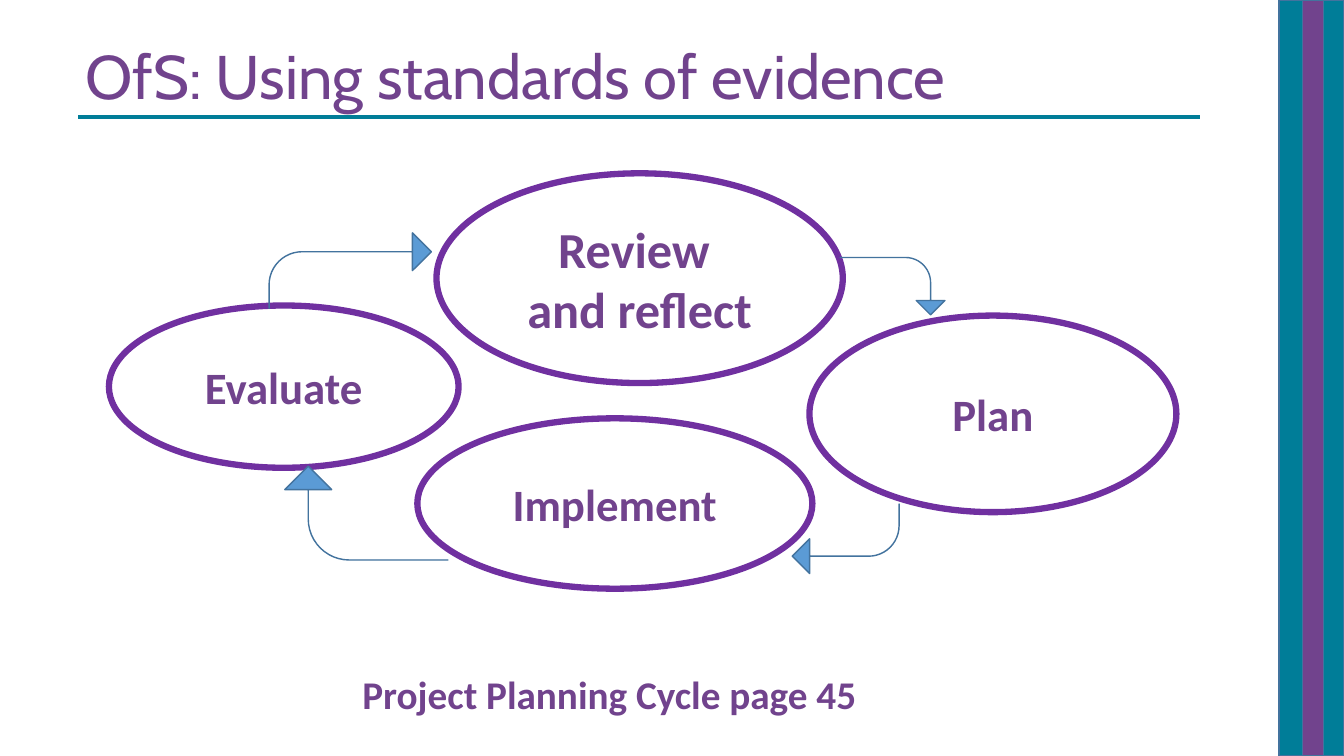
from dataclasses import dataclass

import pptx
import pptx.dml.color
import pptx.enum.shapes
import pptx.enum.text
import pptx.oxml
import pptx.oxml.ns
import pptx.shapes.autoshape
import pptx.slide
import pptx.text.text
import pptx.util

Pt = pptx.util.Pt
RGBColor = pptx.dml.color.RGBColor
Shape = pptx.enum.shapes.MSO_SHAPE
Align = pptx.enum.text.PP_ALIGN
Anchor = pptx.enum.text.MSO_ANCHOR

TEAL = RGBColor(0x00, 0x7D, 0x98)
PLUM = RGBColor(0x71, 0x43, 0x8D)
VIOLET = RGBColor(0x70, 0x30, 0xA0)
SKY = RGBColor(0x5B, 0x9B, 0xD5)
STEEL = RGBColor(0x43, 0x73, 0x9E)
WHITE = RGBColor(0xFF, 0xFF, 0xFF)

ARROW_ADJUSTMENTS = (0, 0.25, 0.25, 0.438)


@dataclass(frozen=True)
class Box:
    left: float
    top: float
    width: float
    height: float

    def lengths(self) -> tuple[Pt, Pt, Pt, Pt]:
        return Pt(self.left), Pt(self.top), Pt(self.width), Pt(self.height)


@dataclass(frozen=True)
class Stripe:
    box: Box
    color: RGBColor


@dataclass(frozen=True)
class Stage:
    label: str
    box: Box
    size: float = 32


@dataclass(frozen=True)
class Turn:
    box: Box
    rotation: float


STRIPES = (
    Stripe(Box(945.1, 0, 14.9, 540), TEAL),
    Stripe(Box(929, 0, 16.4, 540), PLUM),
    Stripe(Box(913.5, 0, 16.8, 540), TEAL),
)

STAGES = (
    Stage("Review \nand reflect", Box(311.8, 123.8, 290.2, 149.8), 36),
    Stage("Plan", Box(578.2, 225.4, 262.1, 140.4)),
    Stage("Implement", Box(298.1, 298.8, 282.2, 121.7)),
    Stage("Evaluate", Box(77.8, 218.2, 249.8, 115.9)),
)

TURNS = (
    Turn(Box(228.2, 308.2, 67, 116.6), 270),
    Turn(Box(617, 167, 41, 74.9), 90),
    Turn(Box(192.2, 166.3, 115.9, 54), 0),
    Turn(Box(565.9, 360, 76.3, 49.7), 180),
)


def add_outlined(slide: pptx.slide.Slide, kind: Shape, box: Box, fill: RGBColor,
                 line: RGBColor, weight: float) -> pptx.shapes.autoshape.Shape:
    outlined = slide.shapes.add_shape(kind, *box.lengths())
    outlined.shadow.inherit = False
    outlined.fill.solid()
    outlined.fill.fore_color.rgb = fill
    outlined.line.color.rgb = line
    outlined.line.width = Pt(weight)
    return outlined


def write(frame: pptx.text.text.TextFrame, words: str, size: float,
          font: str = "Calibri", bold: bool = True,
          align: Align = Align.CENTER, anchor: Anchor = Anchor.TOP) -> None:
    frame.text = words
    frame.word_wrap = True
    frame.auto_size = pptx.enum.text.MSO_AUTO_SIZE.NONE
    frame.vertical_anchor = anchor
    for paragraph in frame.paragraphs:
        paragraph.alignment = align
        for run in paragraph.runs:
            run.font.name = font
            run.font.size = Pt(size)
            run.font.bold = bold
            run.font.color.rgb = PLUM


def add_stage(slide: pptx.slide.Slide, stage: Stage) -> None:
    ellipse = add_outlined(slide, Shape.OVAL, stage.box, WHITE, VIOLET, 4.5)
    write(ellipse.text_frame, stage.label, stage.size, anchor=Anchor.MIDDLE)


def add_turn(slide: pptx.slide.Slide, turn: Turn) -> None:
    arrow = add_outlined(slide, Shape.BENT_ARROW, turn.box, SKY, STEEL, 1)
    for index, value in enumerate(ARROW_ADJUSTMENTS):
        arrow.adjustments[index] = value
    arrow.rotation = turn.rotation


def add_title_rule(slide: pptx.slide.Slide) -> None:
    rule = slide.shapes.add_connector(
        pptx.enum.shapes.MSO_CONNECTOR.STRAIGHT, Pt(56), Pt(83.5), Pt(857), Pt(83.5))
    rule.line.color.rgb = TEAL
    rule.line.width = Pt(3)
    properties = rule._element.find(pptx.oxml.ns.qn("p:spPr"))
    properties.append(pptx.oxml.parse_xml(
        f"<a:effectLst {pptx.oxml.ns.nsdecls('a')}/>"))


def main() -> None:
    deck = pptx.Presentation()
    deck.slide_width, deck.slide_height = Pt(960), Pt(540)
    slide = deck.slides.add_slide(deck.slide_layouts.get_by_name("Title Only"))

    # Side stripes
    for stripe in STRIPES:
        add_outlined(slide, Shape.RECTANGLE, stripe.box, stripe.color, STEEL, 1)

    # Stages of the cycle
    for stage in STAGES:
        add_stage(slide, stage)

    # Title and its rule
    add_title_rule(slide)
    title = slide.shapes.title
    title.left, title.top, title.width, title.height = Box(54, 23.8, 828, 60.5).lengths()
    write(title.text_frame, "OfS: Using standards of evidence", 44,
          font="Cabin", bold=False, align=Align.LEFT)

    # Page reference
    reference = slide.shapes.add_textbox(*Box(77, 475.2, 716.4, 41).lengths())
    write(reference.text_frame, "Project Planning Cycle page 45", 28)

    # Arrows between the stages
    for turn in TURNS:
        add_turn(slide, turn)

    deck.save("out.pptx")


if __name__ == "__main__":
    main()
